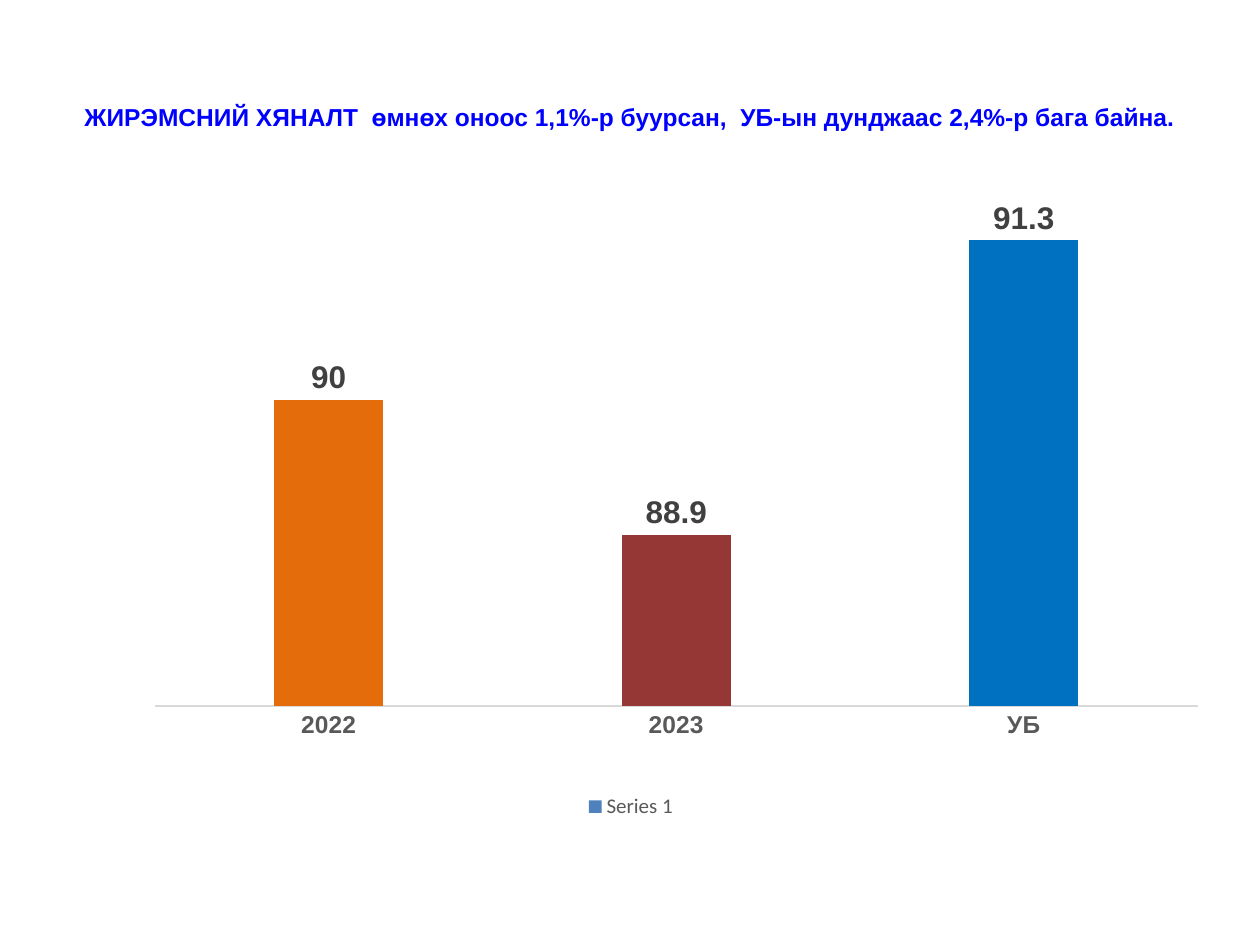
from lxml import etree
from pptx import Presentation, util as u
from pptx.chart.data import CategoryChartData
from pptx.dml.color import RGBColor
from pptx.enum import chart as ch, text

THEME = {
    "head": ("Arial", 14, "0000FF", True),
    "base": ("Calibri", 10, "000000", False),
    "axis": ("Arial", 14, "595959", True),
    "label": ("Arial", 18, "404040", True),
    "legend": ("Calibri", 12, "595959", False),
    "line": "D9D9D9",
    "series": "4F81BD",
    "bars": ("E46C0A", "953735", "0070C0"),
}
PLOT = {"x": 0.08, "y": 0, "w": 0.92, "h": 0.81}


def style(font, role):
    font.name, size, color, font.bold = THEME[role]
    font.size = u.Pt(size)
    font.color.rgb = RGBColor.from_string(color)


def paint(fill, color):
    fill.solid()
    fill.fore_color.rgb = RGBColor.from_string(color)


deck = Presentation()
deck.slide_width, deck.slide_height = u.Inches(10), u.Inches(7.5)
wide, high = deck.slide_width, deck.slide_height
slide = deck.slides.add_slide(deck.slide_layouts[6])

# Title
box = slide.shapes.add_textbox(int(wide * 0.05), int(high * 0.04),
                               int(wide * 0.9), int(high / 6))
frame = box.text_frame
frame.word_wrap = True
frame.vertical_anchor = text.MSO_ANCHOR.MIDDLE
head = frame.paragraphs[0]
head.text = "ЖИРЭМСНИЙ ХЯНАЛТ  өмнөх оноос 1,1%-р буурсан,  УБ-ын дунджаас 2,4%-р бага байна."
head.alignment = text.PP_ALIGN.CENTER
style(head.font, "head")

# Column chart
data = CategoryChartData()
data.categories = ["2022", "2023", "УБ"]
data.add_series("Series 1", (90, 88.9, 91.3))
chart = slide.shapes.add_chart(
    ch.XL_CHART_TYPE.COLUMN_CLUSTERED, u.Inches(0.51), u.Inches(1.59),
    int(wide * 0.9), int(high * 0.66), data).chart
style(chart.font, "base")
chart.has_title = False
chart.has_legend = True
chart.legend.position = ch.XL_LEGEND_POSITION.BOTTOM
chart.legend.include_in_layout = False
style(chart.legend.font, "legend")

# Axes
cats = chart.category_axis
cats.major_tick_mark = ch.XL_TICK_MARK.NONE
style(cats.tick_labels.font, "axis")
cats.format.line.color.rgb = RGBColor.from_string(THEME["line"])
cats.format.line.width = u.Pt(0.75)
vals = chart.value_axis
vals.visible = False
vals.has_major_gridlines = False
vals.minimum_scale, vals.maximum_scale = 87.5, 91.6

# Bars and their labels
plot = chart.plots[0]
plot.vary_by_categories = False
plot.gap_width, plot.overlap = 219, -27
bars = plot.series[0]
paint(bars.format.fill, THEME["series"])
for i, color in enumerate(THEME["bars"]):
    paint(bars.points[i].format.fill, color)
labels = bars.data_labels
labels.show_value = True
labels.position = ch.XL_LABEL_POSITION.OUTSIDE_END
style(labels.font, "label")

# Fixed place of the plot inside the chart
area = chart._chartSpace.chart.plotArea
ns = "{%s}" % area.nsmap["c"]
for old in area.findall(ns + "layout"):
    area.remove(old)
layout = etree.Element(ns + "layout")
area.insert(0, layout)
manual = etree.SubElement(layout, ns + "manualLayout")
rules = {"layoutTarget": "inner", "xMode": "edge", "yMode": "edge", **PLOT}
for name, val in rules.items():
    etree.SubElement(manual, ns + name).set("val", str(val))

deck.save("out.pptx")
